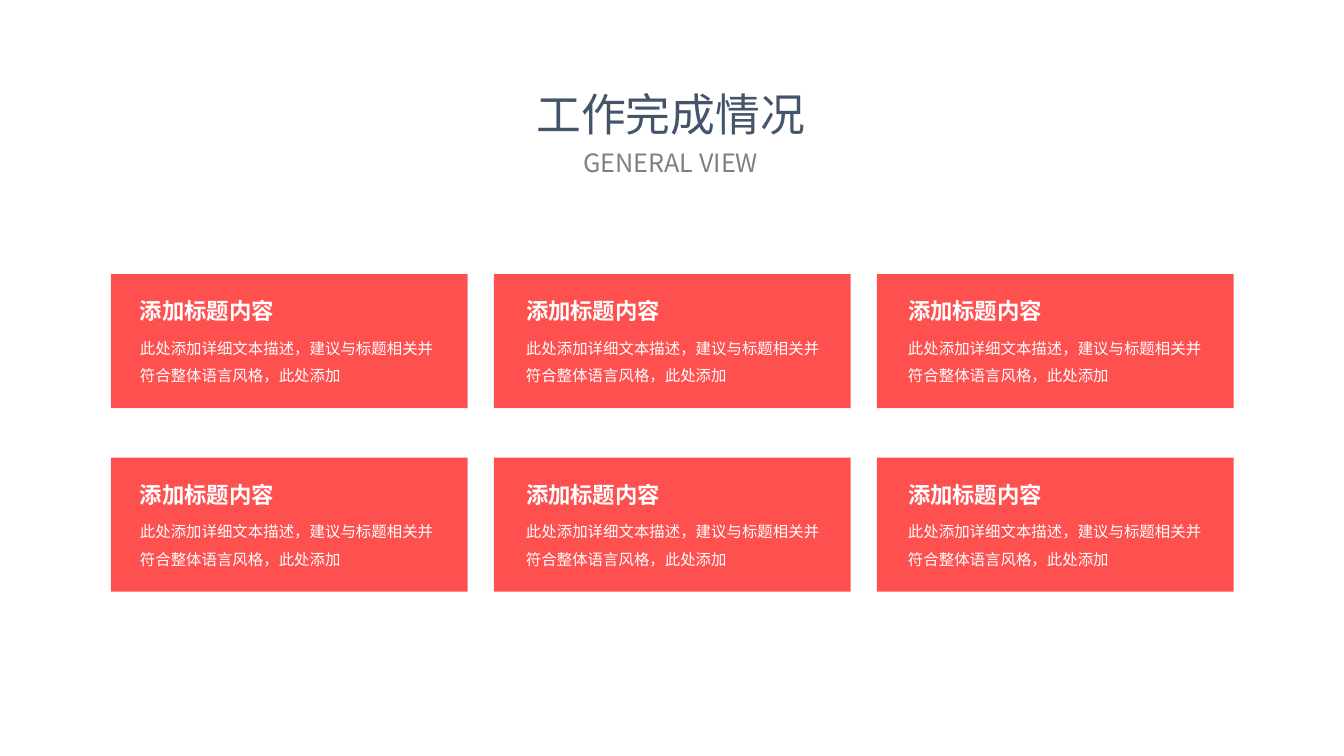
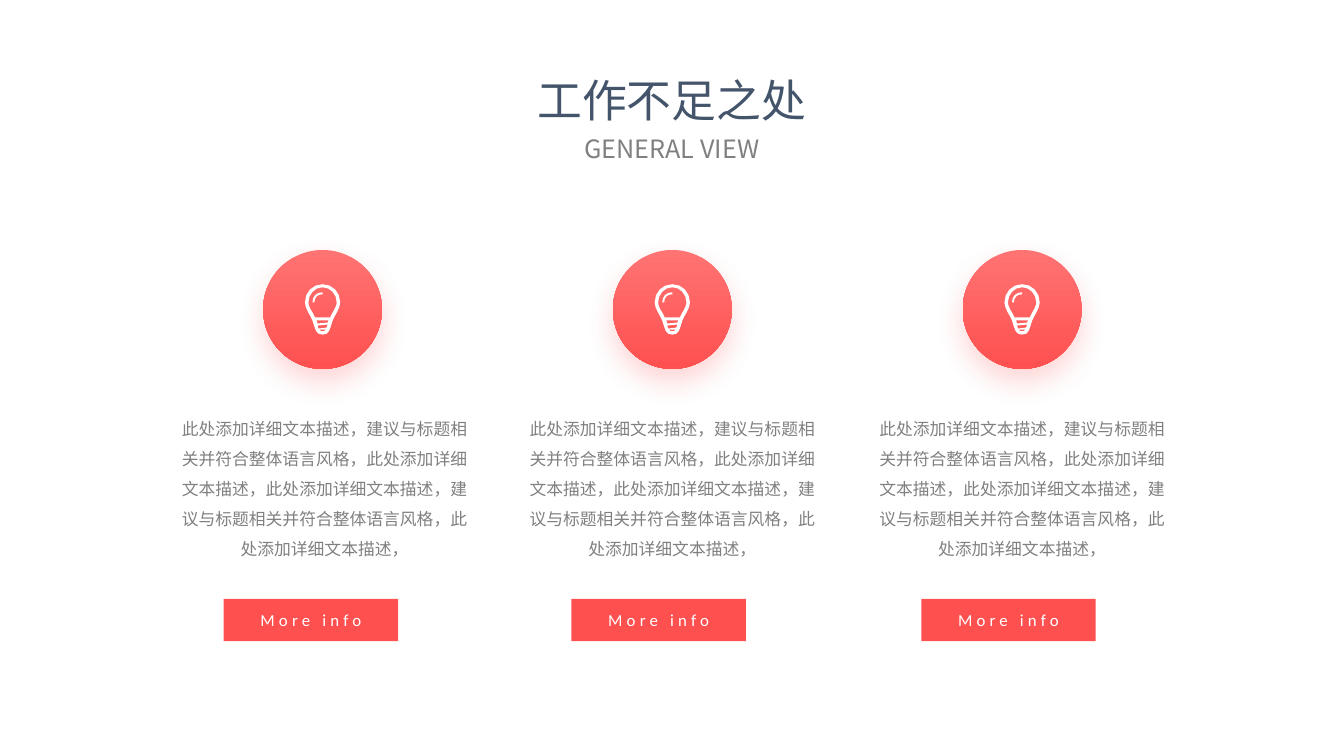
import pptx
import pptx.util
import pptx.dml.color
import pptx.enum.shapes
import pptx.enum.text
import lxml.etree

Inches = pptx.util.Inches
Pt = pptx.util.Pt
CENTER = pptx.enum.text.PP_ALIGN.CENTER
LEFT = pptx.enum.text.PP_ALIGN.LEFT
MIDDLE = pptx.enum.text.MSO_ANCHOR.MIDDLE
RECTANGLE = pptx.enum.shapes.MSO_SHAPE.RECTANGLE
OVAL = pptx.enum.shapes.MSO_SHAPE.OVAL

# Shared style
COLORS = {
    "red": "FF5050",
    "light_red": "FF7373",
    "title": "44546A",
    "gray": "808080",
    "white": "FFFFFF",
}
CHINESE_FONT = "Noto Sans CJK SC"
LATIN_FONT = "Calibri"
BODY_SPACING = {"line_spacing": 1.5, "space_before": Pt(29.5)}

# Wording
CARD_TITLE = "添加标题内容"
CARD_TEXT = "此处添加详细文本描述，建议与标题相关并符合整体语言风格，此处添加"
COLUMN_TEXT = CARD_TEXT + "详细文本描述，" + CARD_TEXT + "详细文本描述，"

# Light bulb in hundredths of an inch from its top centre:
# pairs are corners, sextuples are cubic curves
BULB = [
    # Outer outline
    [(0, 0), (-10, 0, -17.5, 8, -17.5, 18), (-17.5, 24, -12, 31, -10, 36),
     (-7, 45, -7, 50, 0, 50), (7, 50, 7, 45, 10, 36),
     (12, 31, 17.5, 24, 17.5, 18), (17.5, 8, 10, 0, 0, 0)],
    # Glass
    [(7.5, 33), (-7.5, 33), (-10, 28), (-12, 25, -14, 21, -14, 18),
     (-14, 10, -8, 3, 0, 3), (8, 3, 14, 10, 14, 18),
     (14, 21, 12, 25, 10, 28)],
    # Screw thread
    [(-6, 36), (6, 36), (5, 38), (-5, 39)],
    [(-5, 41), (5, 40), (4, 43), (-4, 44)],
    [(-3.5, 45), (3.5, 45), (1.5, 46.5), (-1.5, 46.5)],
]
GLINT = [
    [(0, 8), (-6, 8, -10, 12, -10, 18), (-8, 18), (-8, 13, -5, 10, 0, 10)],
]


def rgb(color):
    return pptx.dml.color.RGBColor.from_string(COLORS[color])


def write_text(frame, text, size, color, font=CHINESE_FONT, bold=False,
               align=LEFT, line_spacing=None, space_before=None,
               tracking=None):
    frame.word_wrap = True
    paragraph = frame.paragraphs[0]
    paragraph.text = text
    paragraph.alignment = align
    paragraph.line_spacing = line_spacing
    paragraph.space_before = space_before
    paragraph.font.size = Pt(size)
    paragraph.font.bold = bold
    paragraph.font.color.rgb = rgb(color)
    paragraph.font.name = font
    # East Asian typeface and letter spacing
    properties = paragraph._p.get_or_add_pPr().get_or_add_defRPr()
    east_asian = lxml.etree.SubElement(properties, pptx.oxml.ns.qn("a:ea"))
    east_asian.set("typeface", font)
    if tracking:
        properties.set("spc", str(tracking * 100))


def add_text(slide, left, top, width, height, text, size, color, **style):
    box = slide.shapes.add_textbox(
        Inches(left), Inches(top), Inches(width), Inches(height))
    write_text(box.text_frame, text, size, color, **style)


def paint(shape, color):
    shape.shadow.inherit = False
    shape.line.fill.background()
    shape.fill.solid()
    shape.fill.fore_color.rgb = rgb(color)


def add_plain_shape(slide, kind, left, top, width, height):
    shape = slide.shapes.add_shape(
        kind, Inches(left), Inches(top), Inches(width), Inches(height))
    paint(shape, "red")
    return shape


def add_heading(slide, left, top, title):
    add_text(slide, left, top, 3.19, 0.64, title, 32, "title", align=CENTER)
    add_text(slide, left, top + 0.6, 3.19, 0.4, "GENERAL VIEW", 18, "gray",
             align=CENTER)


def add_card(slide, left, top, text_left):
    add_plain_shape(slide, RECTANGLE, left, top, 3.54, 1.33)
    add_text(slide, text_left, top + 0.5, 3.16, 0.63, CARD_TEXT, 11,
             "white", **BODY_SPACING)
    add_text(slide, text_left, top + 0.18, 1.55, 0.37, CARD_TITLE, 16,
             "white", bold=True)


def add_glow(shape):
    effects = shape._element.spPr.find(pptx.oxml.ns.qn("a:effectLst"))
    shadow = lxml.etree.SubElement(
        effects, pptx.oxml.ns.qn("a:outerShdw"),
        blurRad=str(Pt(20)), dist=str(Pt(9)), dir="5400000",
        algn="t", rotWithShape="0")
    color = lxml.etree.SubElement(
        shadow, pptx.oxml.ns.qn("a:srgbClr"), val=COLORS["red"])
    lxml.etree.SubElement(color, pptx.oxml.ns.qn("a:alpha"), val="23000")


def add_disc(slide, center, top, diameter):
    disc = add_plain_shape(
        slide, OVAL, center - diameter / 2, top, diameter, diameter)
    disc.fill.gradient()
    disc.fill.gradient_angle = 270
    for stop, color in zip(disc.fill.gradient_stops, ("light_red", "red")):
        stop.color.rgb = rgb(color)
    add_glow(disc)


def flatten(contour, steps=4):
    """Turn corners and cubic curves into a list of points."""
    points = [contour[0]]
    for segment in contour[1:]:
        if len(segment) == 2:
            points.append(segment)
            continue
        controls = [points[-1], segment[:2], segment[2:4], segment[4:]]
        for step in range(1, steps + 1):
            t = step / steps
            weights = ((1 - t) ** 3, 3 * t * (1 - t) ** 2,
                       3 * t ** 2 * (1 - t), t ** 3)
            points.append(tuple(
                sum(weight * control[axis]
                    for weight, control in zip(weights, controls))
                for axis in (0, 1)))
    return points


def add_outline(slide, center, top, outline):
    contours = [
        [(Inches(center + x / 100), Inches(top + y / 100))
         for x, y in flatten(contour)]
        for contour in outline]
    builder = slide.shapes.build_freeform(*contours[0][0])
    for index, points in enumerate(contours):
        if index:
            builder.move_to(*points[0])
        builder.add_line_segments(points[1:], close=True)
    paint(builder.convert_to_shape(), "white")


def add_button(slide, left, top):
    button = add_plain_shape(slide, RECTANGLE, left, top, 1.73, 0.42)
    button.text_frame.vertical_anchor = MIDDLE
    write_text(button.text_frame, "More info", 12, "white", font=LATIN_FONT,
               align=CENTER, tracking=3)


def add_column(slide, center, text_left):
    add_disc(slide, center, 2.48, 1.18)
    for outline in (BULB, GLINT):
        add_outline(slide, center, 2.82, outline)
    add_text(slide, text_left, 4, 3.08, 2.31, COLUMN_TEXT, 12, "gray",
             align=CENTER, **BODY_SPACING)
    add_button(slide, text_left + 0.54, 5.94)


def main():
    presentation = pptx.Presentation()
    presentation.slide_width = Inches(40 / 3)
    presentation.slide_height = Inches(7.5)
    blank = presentation.slide_layouts[6]

    # Work completed: two rows of three cards
    slide = presentation.slides.add_slide(blank)
    add_heading(slide, 5.06, 0.81, "工作完成情况")
    for top in (2.72, 4.54):
        for column, text_left in enumerate((1.29, 5.12, 8.91)):
            add_card(slide, 1.1 + 3.8 * column, top, text_left)

    # Shortcomings: three columns with icon, text and button
    slide = presentation.slides.add_slide(blank)
    add_heading(slide, 5.07, 0.67, "工作不足之处")
    for column, text_left in enumerate((1.68, 5.13, 8.6)):
        add_column(slide, 3.2 + 3.47 * column, text_left)

    presentation.save("out.pptx")


if __name__ == "__main__":
    main()
